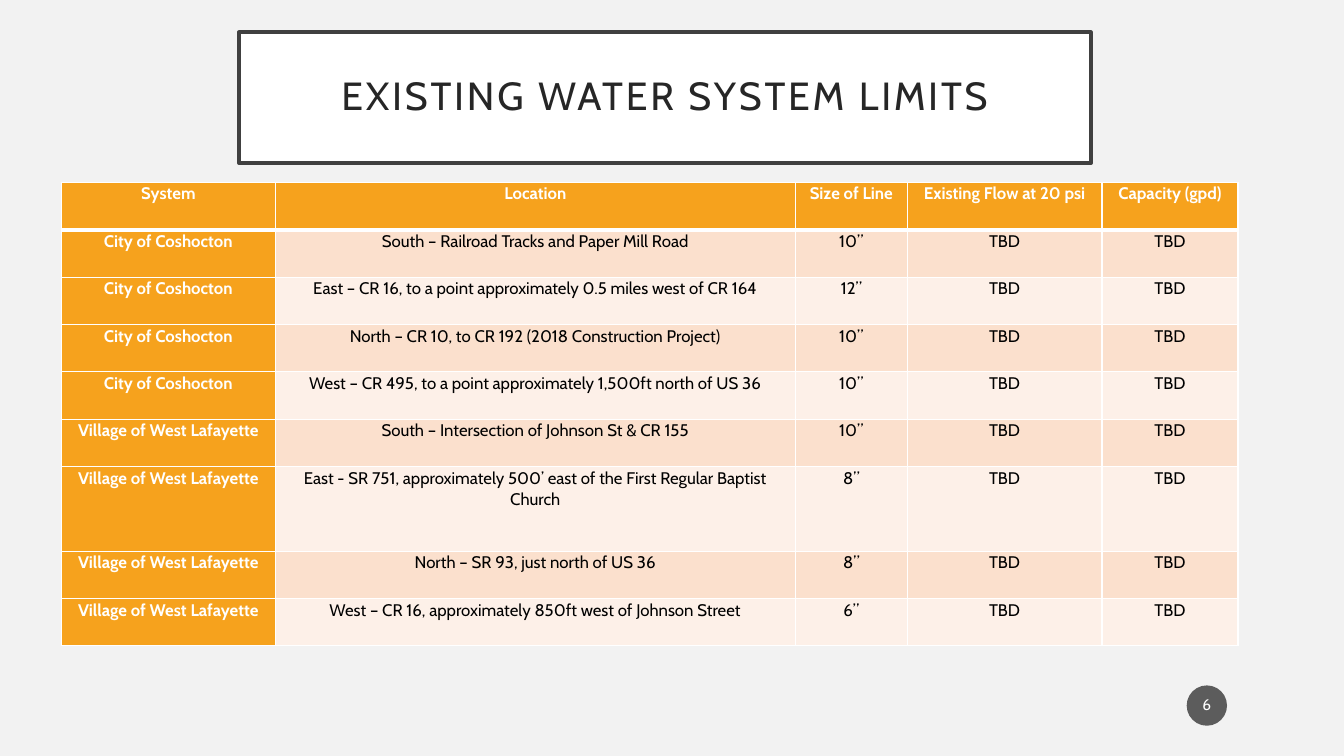
from dataclasses import dataclass

from lxml.etree import SubElement
from pptx import Presentation
from pptx.dml.color import RGBColor
from pptx.enum.shapes import MSO_SHAPE as Preset
from pptx.enum.text import MSO_ANCHOR as Anchor, PP_ALIGN as Align
from pptx.oxml.ns import qn
from pptx.slide import Slide
from pptx.table import _Cell as Cell
from pptx.text.text import TextFrame
from pptx.util import Inches, Pt

FONT = "Cabin"
WHITE = RGBColor(0xFF, 0xFF, 0xFF)
BLACK = RGBColor(0x00, 0x00, 0x00)
BACKGROUND = RGBColor(0xF2, 0xF2, 0xF2)
FRAME = RGBColor(0x40, 0x40, 0x40)
TITLE_INK = RGBColor(0x26, 0x26, 0x26)
BADGE = RGBColor(0x1D, 0x1D, 0x1D)
ORANGE = RGBColor(0xF6, 0xA2, 0x1D)
BANDS = (RGBColor(0xFB, 0xE0, 0xCD), RGBColor(0xFD, 0xF0, 0xE8))

HEADINGS = ("System", "Location", "Size of Line", "Existing Flow at 20 psi", "Capacity (gpd)")
COLUMN_WIDTHS = (2.12, 5.16, 1.11, 1.93, 1.35)
ROW_HEIGHT = 0.47
TALL_ROW_HEIGHT = 0.84
COSHOCTON = "City of Coshocton"
LAFAYETTE = "Village of West Lafayette"


@dataclass(frozen=True)
class WaterLine:
    system: str
    location: str
    size: str
    flow: str = "TBD"
    capacity: str = "TBD"
    height: float = ROW_HEIGHT

    def texts(self) -> tuple[str, ...]:
        return self.system, self.location, self.size, self.flow, self.capacity


@dataclass(frozen=True)
class TextStyle:
    size: float
    color: RGBColor
    line_spacing: float
    bold: bool = False


WATER_LINES = (
    WaterLine(COSHOCTON, "South – Railroad Tracks and Paper Mill Road", "10”"),
    WaterLine(COSHOCTON, "East – CR 16, to a point approximately 0.5 miles west of CR 164", "12”"),
    WaterLine(COSHOCTON, "North – CR 10, to CR 192 (2018 Construction Project)", "10”"),
    WaterLine(COSHOCTON, "West – CR 495, to a point approximately 1,500ft north of US 36", "10”"),
    WaterLine(LAFAYETTE, "South – Intersection of Johnson St & CR 155", "10”"),
    WaterLine(
        LAFAYETTE,
        "East - SR 751, approximately 500’ east of the First Regular Baptist Church",
        "8”",
        height=TALL_ROW_HEIGHT,
    ),
    WaterLine(LAFAYETTE, "North – SR 93, just north of US 36", "8”"),
    WaterLine(LAFAYETTE, "West – CR 16, approximately 850ft west of Johnson Street", "6”"),
)

TITLE_STYLE = TextStyle(28, TITLE_INK, 0.9)
BADGE_STYLE = TextStyle(11, WHITE, 0.9)
HEADING_STYLE = TextStyle(12, WHITE, 1.06, bold=True)
BODY_STYLE = TextStyle(12, BLACK, 1.06)


def write_text(frame: TextFrame, text: str, style: TextStyle) -> None:
    frame.text = text
    para = frame.paragraphs[0]
    para.alignment = Align.CENTER
    para.line_spacing = style.line_spacing
    font = para.runs[0].font
    font.name = FONT
    font.size = Pt(style.size)
    font.bold = style.bold
    font.color.rgb = style.color


def set_margins(target: TextFrame | Cell, side: float, end: float) -> None:
    target.margin_left = target.margin_right = Inches(side)
    target.margin_top = target.margin_bottom = Inches(end)


def add_title(page: Slide) -> None:
    box = page.shapes.add_shape(Preset.RECTANGLE, Inches(2.37), Inches(0.32), Inches(8.45), Inches(1.3))
    box.shadow.inherit = False
    box.fill.solid()
    box.fill.fore_color.rgb = WHITE
    box.line.color.rgb = FRAME
    box.line.width = Pt(2.5)
    frame = box.text_frame
    frame.word_wrap = True
    frame.vertical_anchor = Anchor.MIDDLE
    set_margins(frame, 0.2, 0.2)
    write_text(frame, "EXISTING WATER SYSTEM LIMITS", TITLE_STYLE)
    frame.paragraphs[0].runs[0].font._element.set("spc", "200")


def add_borders(cell: Cell, top: float, bottom: float) -> None:
    properties = cell._tc.get_or_add_tcPr()
    for side, width in (("L", 1), ("R", 1), ("T", top), ("B", bottom)):
        line = SubElement(properties, qn(f"a:ln{side}"), w=str(Pt(width)))
        fill = SubElement(line, qn("a:solidFill"))
        SubElement(fill, qn("a:srgbClr"), val=str(WHITE))


def fill_cell(cell: Cell, text: str, row: int, column: int) -> None:
    heading = row == 0 or column == 0
    set_margins(cell, 0.05, 0)
    write_text(cell.text_frame, text, HEADING_STYLE if heading else BODY_STYLE)
    add_borders(cell, top=3 if row == 1 else 1, bottom=3 if row == 0 else 1)
    cell.fill.solid()
    cell.fill.fore_color.rgb = ORANGE if heading else BANDS[(row - 1) % 2]


def add_limits_table(page: Slide) -> None:
    heights = [ROW_HEIGHT] + [line.height for line in WATER_LINES]
    rows = [HEADINGS] + [line.texts() for line in WATER_LINES]
    table = page.shapes.add_table(
        len(rows), len(HEADINGS), Inches(0.61), Inches(1.81),
        Inches(sum(COLUMN_WIDTHS)), Inches(sum(heights)),
    ).table
    for column, width in zip(table.columns, COLUMN_WIDTHS):
        column.width = Inches(width)
    for table_row, height in zip(table.rows, heights):
        table_row.height = Inches(height)
    for row, texts in enumerate(rows):
        for column, text in enumerate(texts):
            fill_cell(table.cell(row, column), text, row, column)


def add_page_number(page: Slide) -> None:
    badge = page.shapes.add_shape(Preset.OVAL, Inches(11.77), Inches(6.8), Inches(0.4), Inches(0.4))
    badge.shadow.inherit = False
    badge.fill.solid()
    badge.fill.fore_color.rgb = BADGE
    color = badge._element.spPr.find(qn("a:solidFill")).find(qn("a:srgbClr"))
    SubElement(color, qn("a:alpha"), val="70000")
    badge.line.fill.background()
    frame = badge.text_frame
    frame.word_wrap = True
    frame.vertical_anchor = Anchor.MIDDLE
    set_margins(frame, 0.02, 0.05)
    write_text(frame, "6", BADGE_STYLE)
    frame.paragraphs[0].space_after = Pt(6)


def main() -> None:
    deck = Presentation()
    deck.slide_width = Inches(13.33)
    deck.slide_height = Inches(7.5)
    page = deck.slides.add_slide(deck.slide_layouts[6])
    page.background.fill.solid()
    page.background.fill.fore_color.rgb = BACKGROUND
    add_title(page)
    add_limits_table(page)
    add_page_number(page)
    deck.save("out.pptx")


if __name__ == "__main__":
    main()
